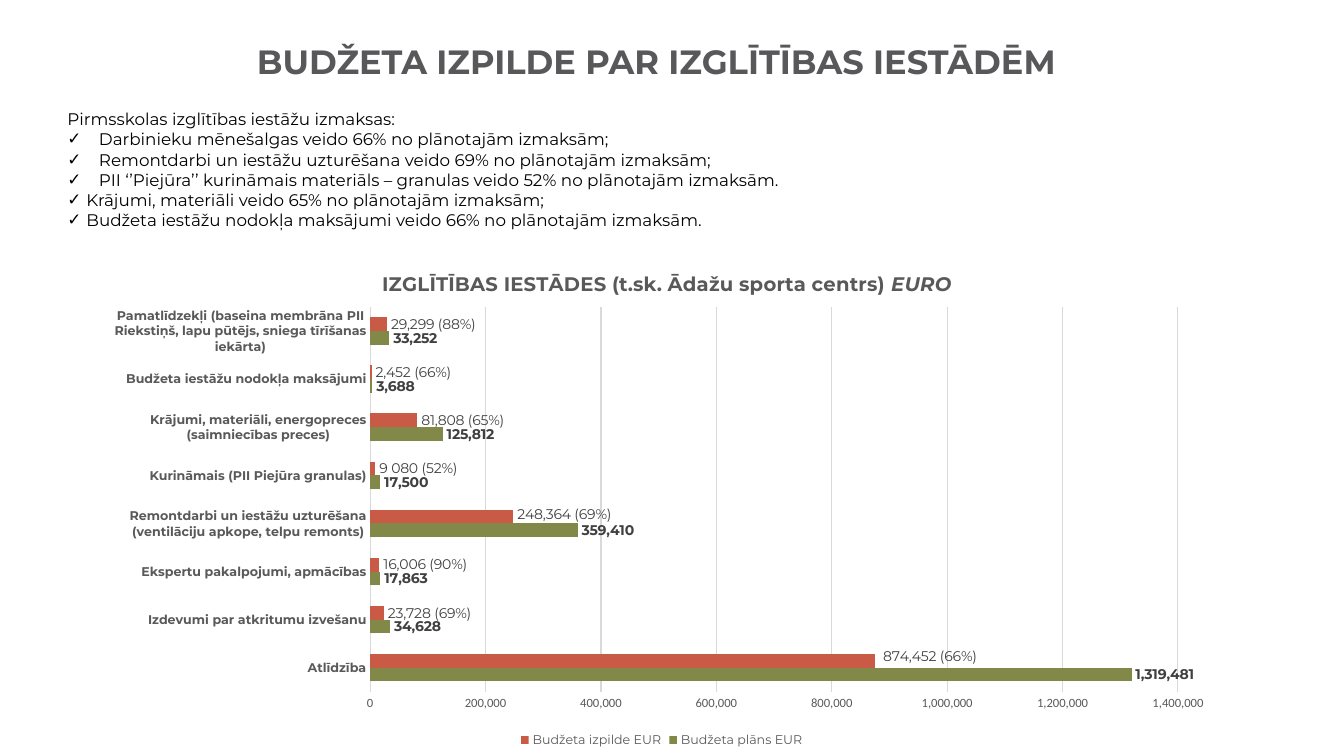
"""Build the slide on budget execution across educational institutions."""
from dataclasses import dataclass

from lxml import etree
from pptx import Presentation
from pptx.chart import data as chart_data
from pptx.dml import color
from pptx.enum import chart as ce, text
from pptx.oxml import ns
from pptx.util import Pt

COLORS = {"heading": "58585B", "body": "000000", "axis": "595959", "label": "404040",
          "grid": "D9D9D9", "plan": "828847", "actual": "C95B46"}
FONT = "Montserrat"


@dataclass(frozen=True)
class Line:
    """A line of the cost summary; a positive indent gives it a check mark."""
    wording: str
    indent: float = 0


@dataclass(frozen=True)
class Cost:
    """A budget item with its plan, its execution and the label of the latter."""
    item: str
    plan: int
    actual: int
    label: str


LINES = [
    Line("Pirmsskolas izglītības iestāžu izmaksas:"),
    Line("Darbinieku mēnešalgas veido 66% no plānotajām izmaksām;", 22.5),
    Line("Remontdarbi un iestāžu uzturēšana veido 69% no plānotajām izmaksām;", 22.5),
    Line("PII ‘’Piejūra’’ kurināmais materiāls – granulas veido 52% no plānotajām izmaksām.", 22.5),
    Line("Krājumi, materiāli veido 65% no plānotajām izmaksām;", 13.5),
    Line("Budžeta iestāžu nodokļa maksājumi veido 66% no plānotajām izmaksām.", 13.5),
]
COSTS = [
    Cost("Atlīdzība", 1319481, 874452, "874,452 (66%)"),
    Cost("Izdevumi par atkritumu izvešanu", 34628, 23728, "23,728 (69%)"),
    Cost("Ekspertu pakalpojumi, apmācības", 17863, 16006, "16,006 (90%)"),
    Cost("Remontdarbi un iestāžu uzturēšana (ventilāciju apkope, telpu remonts)",
         359410, 248364, "248,364 (69%)"),
    Cost("Kurināmais (PII Piejūra granulas)", 17500, 9080, "9 080 (52%)"),
    Cost("Krājumi, materiāli, energopreces (saimniecības preces)",
         125812, 81808, "81,808 (65%)"),
    Cost("Budžeta iestāžu nodokļa maksājumi", 3688, 2452, "2,452 (66%)"),
    Cost("Pamatlīdzekļi (baseina membrāna PII Riekstiņš, lapu pūtējs, "
         "sniega tīrīšanas iekārta)", 33252, 29299, "29,299 (88%)"),
]


def rgb(name: str) -> color.RGBColor:
    """Return the named colour."""
    return color.RGBColor.from_string(COLORS[name])


def style(font, size: float, tint: str, bold: bool = False, face: str = FONT) -> None:
    """Format a font."""
    font.name, font.size, font.bold = face, Pt(size), bold
    font.color.rgb = rgb(tint)


def place(shape, left: float, top: float, width: float, height: float) -> None:
    """Move and size a shape, in points."""
    shape.left, shape.top, shape.width, shape.height = map(Pt, (left, top, width, height))


def set_layout(parent, position: int, **settings) -> None:
    """Give a chart part a manual layout as the child at the given position."""
    for old in parent.findall(ns.qn("c:layout")):
        parent.remove(old)
    layout = etree.Element(ns.qn("c:layout"))
    manual = etree.SubElement(layout, ns.qn("c:manualLayout"))
    for tag, value in settings.items():
        etree.SubElement(manual, ns.qn(f"c:{tag}")).set("val", str(value))
    parent.insert(position, layout)


def write_heading(heading) -> None:
    """Fill the title placeholder."""
    place(heading, 43.9, 28.8, 849.6, 33.8)
    frame = heading.text_frame
    frame.text = "BUDŽETA IZPILDE PAR IZGLĪTĪBAS IESTĀDĒM"
    frame.vertical_anchor = text.MSO_ANCHOR.MIDDLE
    frame.auto_size = text.MSO_AUTO_SIZE.NONE
    paragraph = frame.paragraphs[0]
    paragraph.alignment = text.PP_ALIGN.CENTER
    paragraph.line_spacing = 0.9
    style(paragraph.font, 24, "heading", True)


def write_summary(summary) -> None:
    """Fill the body placeholder with the cost summary."""
    place(summary, 41, 74.2, 817.2, 94.3)
    frame = summary.text_frame
    frame.text = "\n".join(line.wording for line in LINES)
    frame.auto_size = text.MSO_AUTO_SIZE.NONE
    for paragraph, line in zip(frame.paragraphs, LINES):
        paragraph.alignment = text.PP_ALIGN.JUSTIFY
        paragraph.space_before = Pt(0)
        properties = paragraph._p.get_or_add_pPr()
        properties.set("marL", str(Pt(line.indent)))
        properties.set("indent", str(-Pt(line.indent)))
        if line.indent:
            etree.SubElement(properties, ns.qn("a:buChar")).set("char", "✓")
        else:
            etree.SubElement(properties, ns.qn("a:buNone"))
        style(paragraph.font, 12, "body")


def format_axes(chart) -> None:
    """Format both axes and the gridlines."""
    items, amounts = chart.category_axis, chart.value_axis
    for axis in (items, amounts):
        axis.major_tick_mark = axis.minor_tick_mark = ce.XL_TICK_MARK.NONE
        axis.format.line.fill.background()
    style(items.tick_labels.font, 9, "axis", True)
    style(amounts.tick_labels.font, 9, "axis", face="Calibri")
    amounts.tick_labels.number_format = "#,##0"
    amounts.tick_labels.number_format_is_linked = False
    amounts.minimum_scale, amounts.maximum_scale, amounts.major_unit = 0, 1400000, 200000
    grid = amounts.major_gridlines.format.line
    grid.width = Pt(0.75)
    grid.color.rgb = rgb("grid")


def format_series(plot) -> None:
    """Colour and label the bars."""
    plot.gap_width, plot.overlap, plot.vary_by_categories = 150, 0, False
    for series, tint in zip(plot.series, ("plan", "actual")):
        series.format.fill.solid()
        series.format.fill.fore_color.rgb = rgb(tint)
        labels = series.data_labels
        labels.show_value = True
        labels.number_format, labels.number_format_is_linked = "#,##0", False
        labels.position = ce.XL_LABEL_POSITION.OUTSIDE_END
        style(labels.font, 10, "label", True)
    actual = plot.series[1]
    for index, cost in enumerate(COSTS):
        label = actual.points[index].data_label
        label.text_frame.text = cost.label
        label.position = ce.XL_LABEL_POSITION.OUTSIDE_END
        style(label.text_frame.paragraphs[0].font, 10, "label")
    for index, x, y in ((0, 0.004, -0.01), (3, 0, -0.005)):
        set_layout(actual.data_labels._element.findall(ns.qn("c:dLbl"))[index], 1, x=x, y=y)


def add_budget_chart(slide) -> None:
    """Add the bar chart of planned and executed costs."""
    budget = chart_data.CategoryChartData(number_format="#,##0")
    budget.categories = [cost.item for cost in COSTS]
    budget.add_series("Budžeta plāns EUR", [cost.plan for cost in COSTS])
    budget.add_series("Budžeta izpilde EUR", [cost.actual for cost in COSTS])
    chart = slide.shapes.add_chart(ce.XL_CHART_TYPE.BAR_CLUSTERED, Pt(69.1), Pt(176.4),
                                   Pt(807.1), Pt(360.7), budget).chart
    style(chart.font, 10, "body", face="Calibri")
    chart.has_title = True
    caption = chart.chart_title.text_frame.paragraphs[0]
    caption.add_run().text = "IZGLĪTĪBAS IESTĀDES (t.sk. Ādažu sporta centrs) "
    currency = caption.add_run()
    currency.text, currency.font.italic = "EURO", True
    style(caption.font, 14, "axis", True)
    chart.chart_title.include_in_layout = False
    set_layout(chart.chart_title._element, 1, xMode="edge", yMode="edge", x=0.25, y=0.04)
    chart.has_legend = True
    chart.legend.position = ce.XL_LEGEND_POSITION.BOTTOM
    chart.legend.include_in_layout = False
    style(chart.legend.font, 9, "axis")
    format_axes(chart)
    format_series(chart.plots[0])
    set_layout(chart._chartSpace.chart.plotArea, 0, layoutTarget="inner", xMode="edge",
               yMode="edge", x=0.242, y=0.119, w=0.715, h=0.762)


def main() -> None:
    """Build and save the slide."""
    deck = Presentation()
    deck.slide_width, deck.slide_height = Pt(960), Pt(540)
    slide = deck.slides.add_slide(deck.slide_layouts[1])
    write_heading(slide.shapes.title)
    write_summary(slide.placeholders[1])
    add_budget_chart(slide)
    deck.save("out.pptx")


if __name__ == "__main__":
    main()
